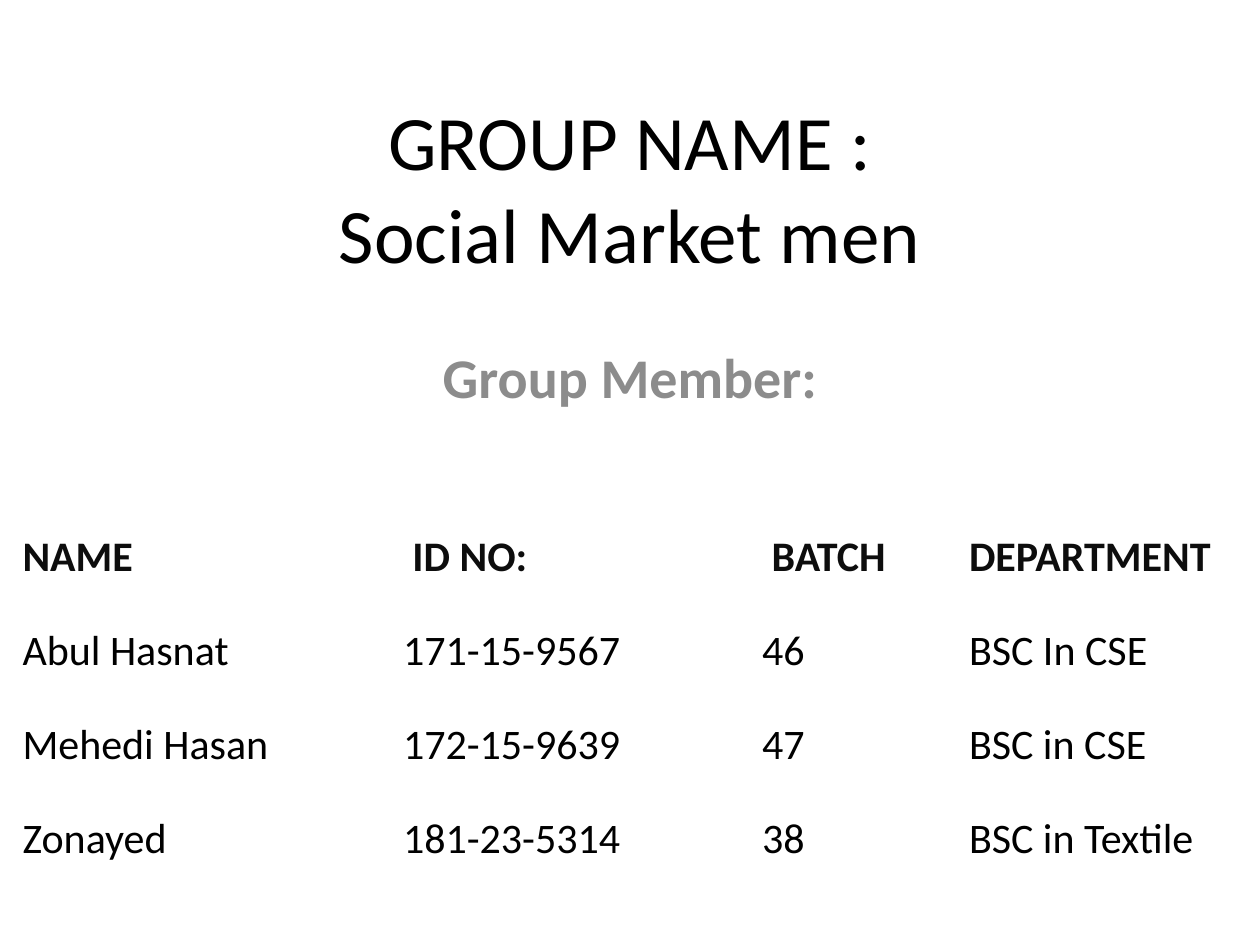
"""Build the group introduction slide with its member table."""
import pptx
import pptx.dml.color
import pptx.enum.text
import pptx.util

Cm = pptx.util.Cm

TITLE_LINES = ["GROUP NAME :", "Social Market men"]
SUBTITLE = "Group Member:"
MEMBERS = [
    ("NAME", " ID NO:", " BATCH", "DEPARTMENT"),
    ("Abul Hasnat", "171-15-9567", "46", "BSC In CSE"),
    ("Mehedi Hasan", "172-15-9639", "47", "BSC in CSE"),
    ("Zonayed", "181-23-5314", "38", "BSC in Textile"),
]
COLUMN_WIDTHS = [7.67, 7.24, 4.17, 5.69]
ROW_HEIGHT = 1.9


def color(value):
    return pptx.dml.color.RGBColor.from_string(value)


def add_run(paragraph, text, size, value, bold=False):
    run = paragraph.add_run()
    run.text = text
    run.font.name = "Calibri"
    run.font.size = pptx.util.Pt(size)
    run.font.bold = bold
    run.font.color.rgb = color(value)


def place(shape, left, top, width, height):
    shape.left, shape.top = Cm(left), Cm(top)
    shape.width, shape.height = Cm(width), Cm(height)


def add_headings(slide):
    title, subtitle = slide.placeholders
    place(title, 1.9, 1.7, 21.6, 4.1)
    place(subtitle, 3.81, 6.78, 17.78, 11.23)
    title.text_frame.vertical_anchor = pptx.enum.text.MSO_ANCHOR.MIDDLE
    for shape in (title, subtitle):
        shape.text_frame.paragraphs[0].alignment = pptx.enum.text.PP_ALIGN.CENTER
    paragraph = title.text_frame.paragraphs[0]
    for index, line in enumerate(TITLE_LINES):
        if index:
            paragraph.add_line_break()
        add_run(paragraph, line, 44, "000000")
    add_run(subtitle.text_frame.paragraphs[0], SUBTITLE, 32, "8C8C8C", True)


def add_member_table(slide):
    table = slide.shapes.add_table(
        len(MEMBERS), len(COLUMN_WIDTHS), Cm(0.2), Cm(10.58),
        Cm(sum(COLUMN_WIDTHS)), Cm(ROW_HEIGHT * len(MEMBERS))).table
    for column, width in zip(table.columns, COLUMN_WIDTHS):
        column.width = Cm(width)
    for row_index, member in enumerate(MEMBERS):
        table.rows[row_index].height = Cm(ROW_HEIGHT)
        header = row_index == 0
        for column_index, text in enumerate(member):
            cell = table.cell(row_index, column_index)
            cell.fill.solid()
            cell.fill.fore_color.rgb = color("FFFFFF")
            add_run(cell.text_frame.paragraphs[0], text, 24,
                    "0D0D0D" if header else "000000", header)


def main():
    presentation = pptx.Presentation()
    presentation.slide_width, presentation.slide_height = Cm(25.4), Cm(19.05)
    slide = presentation.slides.add_slide(presentation.slide_layouts[0])
    add_headings(slide)
    add_member_table(slide)
    presentation.save("out.pptx")


if __name__ == "__main__":
    main()
